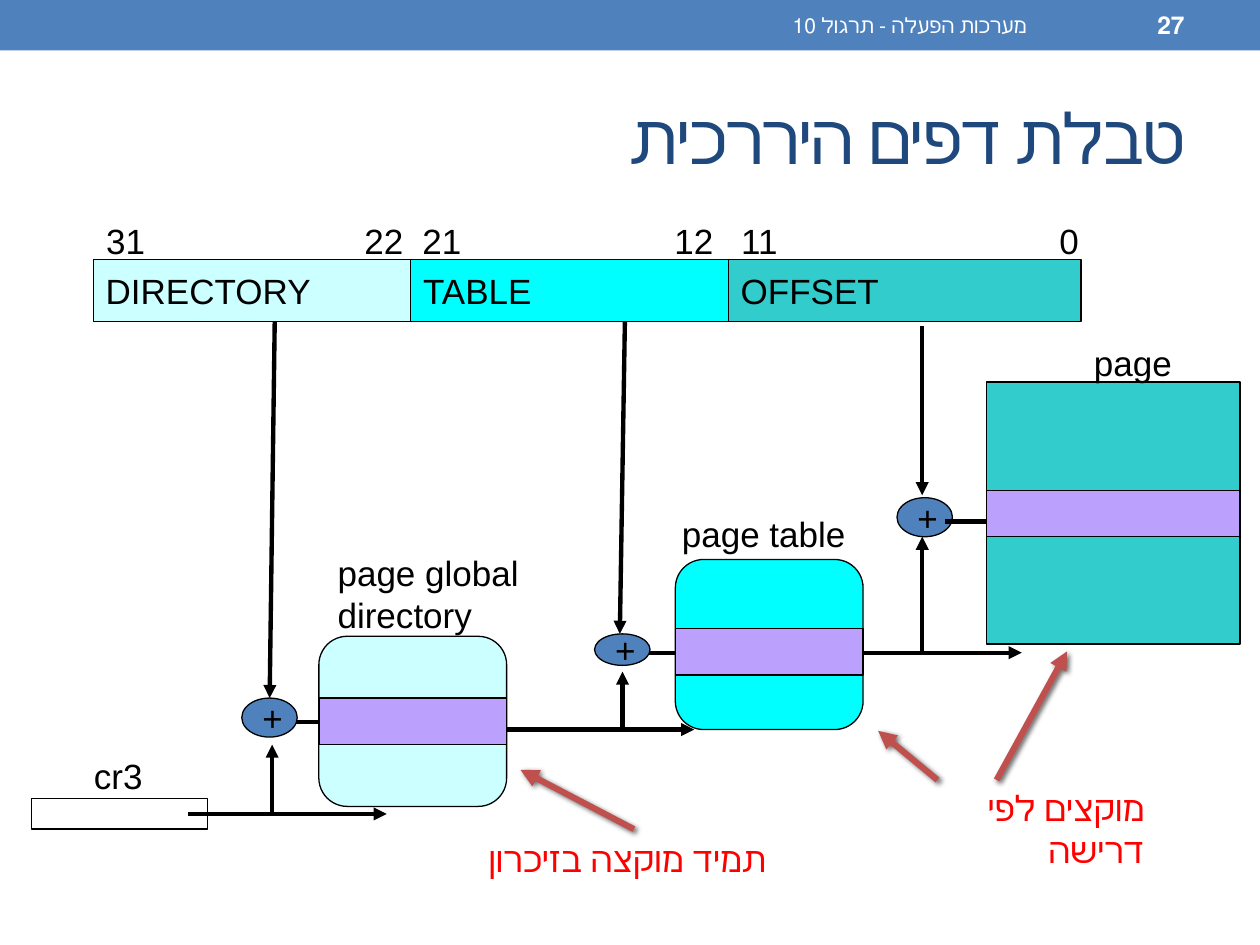
from dataclasses import dataclass

from lxml.etree import SubElement
from pptx import Presentation
from pptx.dml.color import RGBColor
from pptx.enum.shapes import MSO_CONNECTOR, MSO_SHAPE
from pptx.enum.text import MSO_ANCHOR, MSO_AUTO_SIZE, PP_ALIGN
from pptx.oxml.ns import qn
from pptx.util import Pt


@dataclass(frozen=True)
class Theme:
    font: str = "Arial"
    blue: str = "4F81BD"
    navy: str = "1F497D"
    black: str = "000000"
    white: str = "FFFFFF"
    red: str = "FF0000"
    brick: str = "C0504D"
    pale: str = "CCFFFF"
    cyan: str = "00FFFF"
    teal: str = "33CCCC"
    lilac: str = "BBA1FD"
    title_size: float = 40
    body_size: float = 20
    number_size: float = 14
    footer_size: float = 12
    outline: float = 0.75
    wire: float = 2.5
    pointer: float = 3.5


THEME = Theme()
GROWING = {"word_wrap": True, "auto_size": MSO_AUTO_SIZE.SHAPE_TO_FIT_TEXT}
CENTERED = {"word_wrap": True, "vertical_anchor": MSO_ANCHOR.MIDDLE}
UNWRAPPED = {"word_wrap": False, "vertical_anchor": MSO_ANCHOR.MIDDLE}


def set_attributes(target, values):
    for name, value in values.items():
        setattr(target, name, value)


def write_text(shape, text, frame, size=THEME.body_size, color=THEME.black,
               align=PP_ALIGN.RIGHT, bold=False, rtl=False, tracking=0):
    set_attributes(shape.text_frame, frame)
    paragraph = shape.text_frame.paragraphs[0]
    paragraph.alignment = align
    if rtl:
        paragraph._p.get_or_add_pPr().set("rtl", "1")
    run = paragraph.add_run()
    run.text = text
    set_attributes(run.font, {"name": THEME.font, "size": Pt(size), "bold": bold})
    run.font.color.rgb = RGBColor.from_string(color)
    if tracking:
        run._r.get_or_add_rPr().set("spc", str(tracking * 100))


def add_text(slide, box, text, frame=GROWING, **style):
    write_text(slide.shapes.add_textbox(*map(Pt, box)), text, frame, **style)


def add_block(slide, kind, box, fill=None, outlined=True):
    shape = slide.shapes.add_shape(kind, *map(Pt, box))
    shape.shadow.inherit = False
    if fill:
        shape.fill.solid()
        shape.fill.fore_color.rgb = RGBColor.from_string(fill)
    else:
        shape.fill.background()
    if outlined:
        shape.line.color.rgb = RGBColor.from_string(THEME.black)
        shape.line.width = Pt(THEME.outline)
    else:
        shape.line.fill.background()
    return shape


def add_arrow(slide, start, end, color=THEME.black, width=THEME.wire, shadow=False):
    connector = slide.shapes.add_connector(
        MSO_CONNECTOR.STRAIGHT, *map(Pt, (*start, *end)))
    connector.line.color.rgb = RGBColor.from_string(color)
    connector.line.width = Pt(width)
    SubElement(connector.line._get_or_add_ln(), qn("a:tailEnd"), type="triangle")
    effects = SubElement(connector._element.spPr, qn("a:effectLst"))
    if shadow:
        outer = SubElement(effects, qn("a:outerShdw"), blurRad=str(Pt(3)),
                           dist=str(Pt(2)), dir="2700000", rotWithShape="0")
        shade = SubElement(outer, qn("a:srgbClr"), val=THEME.black)
        SubElement(shade, qn("a:alpha"), val="60000")


def add_header(slide, box):
    left, top, width, height = box
    add_block(slide, MSO_SHAPE.RECTANGLE, box, THEME.blue, outlined=False)
    add_text(slide, (left + 270, top + 1.4, 324, height - 2.8),
             "מערכות הפעלה - תרגול 10", CENTERED,
             size=THEME.footer_size, color=THEME.white, rtl=True)
    add_text(slide, (left + 600, top + 1.4, 84, height - 2.8), "27", CENTERED,
             size=THEME.number_size, color=THEME.white, bold=True, rtl=True)


def add_title(slide, box):
    add_text(slide, box, "טבלת דפים היררכית", CENTERED,
             size=THEME.title_size, color=THEME.navy, rtl=True, tracking=-1)


def add_address(slide, box):
    """Linear address: bit numbers above three overlapping fields."""
    left, top, width, height = box
    bits = (("31", 90), ("22", 237.6), ("21", 270.7), ("12", 414.7),
            ("11", 451.4), ("0", 623.5))
    for number, right in bits:
        add_text(slide, (right - 54, top - 26.6, 54, 31.5), number)
    field_width = 201.6
    step = (width - field_width) / 2
    fields = (("DIRECTORY", THEME.pale), ("TABLE", THEME.cyan), ("OFFSET", THEME.teal))
    for index, (name, fill) in enumerate(fields):
        field = add_block(slide, MSO_SHAPE.RECTANGLE,
                          (left + index * step, top, field_width, height), fill)
        write_text(field, name, UNWRAPPED, align=PP_ALIGN.LEFT)


def add_register(slide, box):
    left, top, width, height = box
    add_block(slide, MSO_SHAPE.RECTANGLE, box)
    add_text(slide, (left + 20.2, top - 28.8, 50.4, 31.5), "cr3")


def add_adder(slide, box):
    adder = add_block(slide, MSO_SHAPE.OVAL, box, THEME.blue)
    write_text(adder, "+", UNWRAPPED, align=PP_ALIGN.LEFT)


def add_structure(slide, box, kind, fill, band_offset):
    """Table or page in memory, with its selected entry as a band."""
    left, top, width, height = box
    add_block(slide, kind, box, fill)
    add_block(slide, MSO_SHAPE.RECTANGLE,
              (left, top + band_offset, width, 26.5), THEME.lilac)


def add_note(slide, box, text, pointers):
    add_text(slide, box, text, color=THEME.red, rtl=True)
    for start, end in pointers:
        add_arrow(slide, start, end, THEME.brick, THEME.pointer, shadow=True)


def main():
    presentation = Presentation()
    presentation.slide_width, presentation.slide_height = Pt(720), Pt(540)
    slide = presentation.slides.add_slide(presentation.slide_layouts[6])

    # Header, title and address
    add_header(slide, (0, 0, 720, 28.8))
    add_title(slide, (36, 36, 648, 84.2))
    add_address(slide, (53.3, 148.3, 564.5, 35.3))
    add_register(slide, (18, 456.5, 100.8, 17.3))

    # Base addresses running to the next level
    for start, end, height in ((107.3, 221, 465.1), (277.2, 396.7, 416.9),
                               (483.1, 583.9, 373)):
        add_arrow(slide, (start, height), (end, height))

    # Structure bodies come after the outputs that run beneath their bands
    rounded, square = MSO_SHAPE.ROUNDED_RECTANGLE, MSO_SHAPE.RECTANGLE
    directory_output = ((161.3, 412.6), (192.2, 412.6))
    table_output = ((365, 373), (396.7, 373))
    page_output = ((540, 298.1), (578.2, 298.1))
    for output in (directory_output, table_output):
        add_arrow(slide, *output)

    # Adders with their index and base inputs
    adders = (
        ((138.2, 398.9, 31.7, 22.3), (157, 183.6), (154.1, 398.9), (155.5, 465.1, 425.5)),
        ((339.8, 362.2, 31.7, 18), (357.1, 183.6), (354.2, 362.2), (355.7, 416.9, 383.8)),
        ((512.6, 284.4, 31.7, 22.3), (527, 186.5), (527, 283), (527, 373, 306.7)),
    )
    for box, index_start, index_end, (base_x, base_start, base_end) in adders:
        add_arrow(slide, index_start, index_end)
        add_arrow(slide, (base_x, base_start), (base_x, base_end))
        add_adder(slide, box)
    add_arrow(slide, *page_output)

    # Memory structures and their labels
    add_structure(slide, (182.2, 363.6, 107.3, 97.2), rounded, THEME.pale, 35.3)
    add_structure(slide, (385.9, 319.7, 107.3, 97.2), rounded, THEME.cyan, 39.6)
    add_structure(slide, (563.8, 218.2, 144.7, 149.8), square, THEME.teal, 61.9)
    add_text(slide, (185.8, 311.8, 176.4, 55.4), "page global directory",
             align=PP_ALIGN.LEFT)
    add_text(slide, (378, 289.4, 112.3, 31.5), "page table")
    add_text(slide, (576, 191.5, 100.8, 31.5), "page")

    # Allocation notes
    add_note(slide, (269.3, 475.2, 175.7, 31.5), "תמיד מוקצה בזיכרון",
             [((362.2, 473.8), (297.4, 439.9))])
    add_note(slide, (504, 445.7, 157, 31.5), "מוקצים לפי דרישה",
             [((535.7, 445.7), (501.8, 417.6)), ((569.5, 445.7), (609.8, 372.2))])

    presentation.save("out.pptx")


if __name__ == "__main__":
    main()
